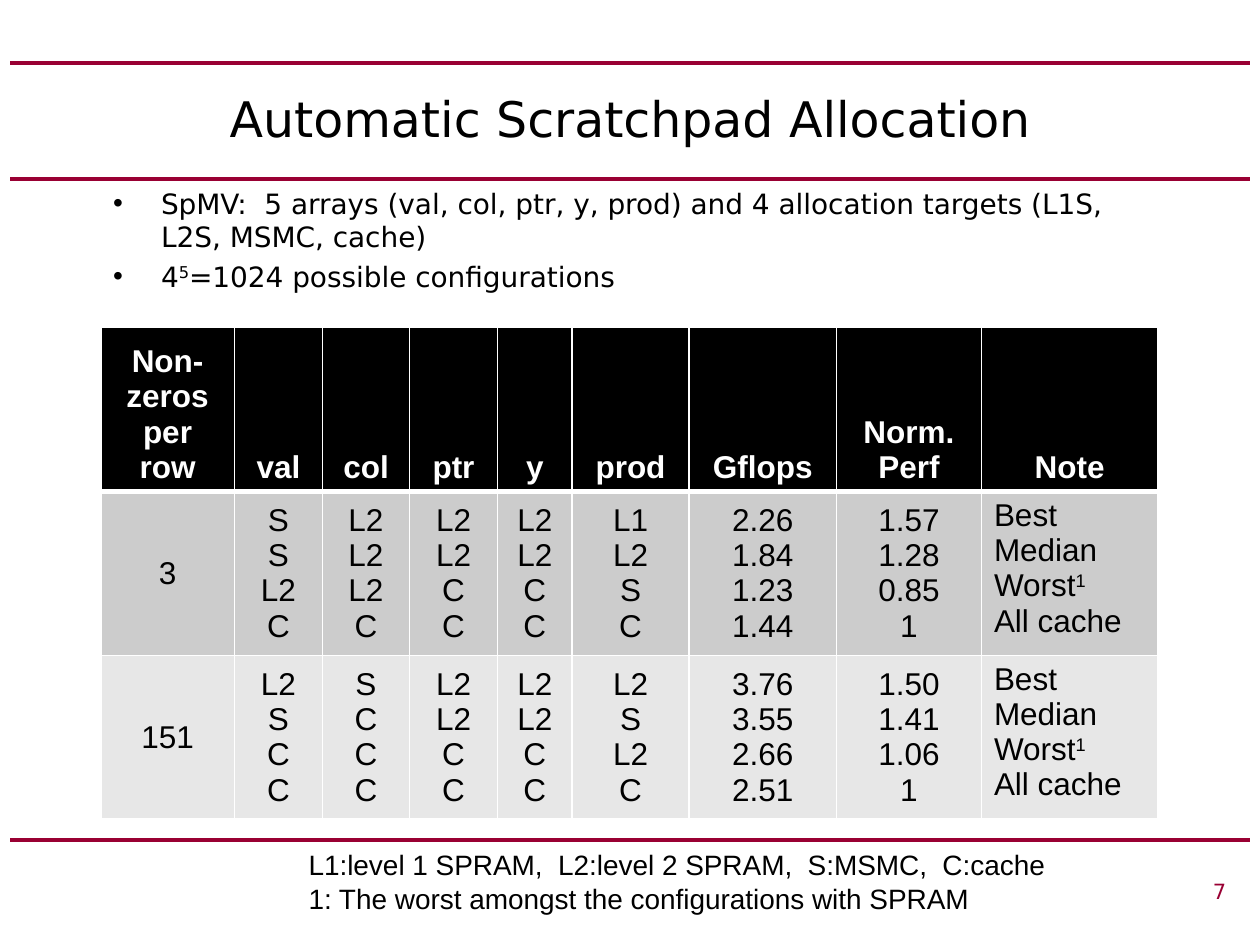
from lxml.etree import SubElement
from pptx import Presentation
from pptx.dml.color import RGBColor as Rgb
from pptx.enum.shapes import MSO_CONNECTOR as Connector
from pptx.enum.text import MSO_ANCHOR as Anchor, MSO_AUTO_SIZE as AutoSize, PP_ALIGN as Align
from pptx.oxml.ns import qn
from pptx.util import Inches, Pt

COLORS = {"rule": "990033", "ink": "000000", "paper": "FFFFFF",
          "header": "000000", "dark_band": "CCCCCC", "light_band": "E7E7E7"}
SANS, BODY = "DejaVu Sans", "Arial"
WIDTH, HEIGHT = 10, 7.5
MARGIN = 0.008 * WIDTH
RULE_TOPS = [0.5, 1.42, 6.67]
COLUMN_WIDTHS = [1.06, 0.7, 0.69, 0.7, 0.59, 0.93, 1.17, 1.15, 1.4]
ROW_HEIGHT = 1.22
HEADINGS = ["Non-zeros per row", "val", "col", "ptr", "y", "prod",
            "Gflops", "Norm.\nPerf", "Note"]
NOTES = "Best\nMedian\nWorst^1^\nAll cache"
RESULTS = {
    "3": ["S S L2 C", "L2 L2 L2 C", "L2 L2 C C", "L2 L2 C C", "L1 L2 S C",
          "2.26 1.84 1.23 1.44", "1.57 1.28 0.85 1"],
    "151": ["L2 S C C", "S C C C", "L2 L2 C C", "L2 L2 C C", "L2 S L2 C",
            "3.76 3.55 2.66 2.51", "1.50 1.41 1.06 1"],
}


def rgb(name):
    return Rgb.from_string(COLORS[name])


def add_runs(paragraph, text, size, face, color="ink", bold=False):
    for index, part in enumerate(text.split("^")):
        if not part:
            continue
        run = paragraph.add_run()
        run.text = part
        font = run.font
        font.size, font.name, font.bold = Pt(size), face, bold
        font.color.rgb = rgb(color)
        if index % 2:
            run._r.get_or_add_rPr().set("baseline", "30000")


def write_lines(frame, text, size, face, color="ink", bold=False, align=Align.LEFT):
    for index, line in enumerate(text.split("\n")):
        paragraph = frame.paragraphs[0] if index == 0 else frame.add_paragraph()
        paragraph.alignment = align
        add_runs(paragraph, line, size, face, color, bold)


def add_rule(slide, top):
    rule = slide.shapes.add_connector(Connector.STRAIGHT, Inches(MARGIN), Inches(top),
                                      Inches(WIDTH - MARGIN), Inches(top))
    rule.line.color.rgb = rgb("rule")
    rule.line.width = Pt(2.25)
    SubElement(rule._element.spPr, qn("a:effectLst"))


def add_title(slide, text):
    title = slide.shapes.title
    title.left, title.top = Inches(0.05 * WIDTH), Inches(RULE_TOPS[0])
    title.width, title.height = Inches(0.9 * WIDTH), Inches(0.87)
    title.text_frame.vertical_anchor = Anchor.MIDDLE
    write_lines(title.text_frame, text, 28, SANS, align=Align.CENTER)


def add_text(slide, box, text, size, face, **style):
    frame = slide.shapes.add_textbox(*map(Inches, box)).text_frame
    frame.word_wrap = True
    write_lines(frame, text, size, face, **style)
    return frame


def add_bullets(slide, box, text):
    frame = add_text(slide, box, text, 16, SANS)
    for index, paragraph in enumerate(frame.paragraphs):
        properties = paragraph._p.get_or_add_pPr()
        properties.set("marL", str(Inches(0.38)))
        properties.set("indent", str(-Inches(0.38)))
        SubElement(properties, qn("a:buFont"), typeface="Arial")
        SubElement(properties, qn("a:buChar"), char="•")
        if index:
            paragraph.space_before = Pt(3.2)


def add_borders(cell, widths):
    properties = cell._tc.get_or_add_tcPr()
    for side, points in widths.items():
        border = SubElement(properties, qn(f"a:ln{side}"), w=str(Pt(points)))
        fill = SubElement(border, qn("a:solidFill"))
        SubElement(fill, qn("a:srgbClr"), val=COLORS["paper"])


def fill_cell(cell, text, band, anchor, align, header):
    add_borders(cell, {"L": 1, "R": 1, "T": 1, "B": 3 if header else 1})
    cell.fill.solid()
    cell.fill.fore_color.rgb = rgb(band)
    cell.vertical_anchor = anchor
    write_lines(cell.text_frame, text, 18, BODY,
                "paper" if header else "ink", header, align)


def add_results_table(slide, left, top):
    rows = [HEADINGS]
    for nonzeros, columns in RESULTS.items():
        rows.append([nonzeros, *(column.replace(" ", "\n") for column in columns), NOTES])
    table = slide.shapes.add_table(len(rows), len(HEADINGS), Inches(left), Inches(top),
                                   Inches(sum(COLUMN_WIDTHS)),
                                   Inches(ROW_HEIGHT * len(rows))).table
    for column, width in zip(table.columns, COLUMN_WIDTHS):
        column.width = Inches(width)
    for r, (row, band) in enumerate(zip(rows, ["header", "dark_band", "light_band"])):
        for c, text in enumerate(row):
            header, note = r == 0, text == NOTES
            anchor = Anchor.BOTTOM if header else Anchor.TOP if note else Anchor.MIDDLE
            align = Align.LEFT if note else Align.CENTER
            fill_cell(table.cell(r, c), text, band, anchor, align, header)


def main():
    deck = Presentation()
    deck.slide_width, deck.slide_height = Inches(WIDTH), Inches(HEIGHT)
    slide = deck.slides.add_slide(deck.slide_layouts[5])
    for top in RULE_TOPS:
        add_rule(slide, top)
    add_title(slide, "Automatic Scratchpad Allocation")
    add_text(slide, (5.75, 6.92, 4.08, 0.33), "7", 12, SANS, color="rule", align=Align.RIGHT)
    add_results_table(slide, 0.08 * WIDTH, 2.6)
    legend = add_text(slide, (2.35, 6.68, 6.25, 0.64),
                      "L1:level 1 SPRAM,  L2:level 2 SPRAM,  S:MSMC,  C:cache\n"
                      "1: The worst amongst the configurations with SPRAM", 16, BODY)
    legend.auto_size = AutoSize.SHAPE_TO_FIT_TEXT
    add_bullets(slide, (0.08 * WIDTH, 1.43, 0.82 * WIDTH, 1.25),
                "SpMV:  5 arrays (val, col, ptr, y, prod) and 4 allocation targets "
                "(L1S, L2S, MSMC, cache)\n4^5^=1024 possible configurations")
    deck.save("out.pptx")


if __name__ == "__main__":
    main()
